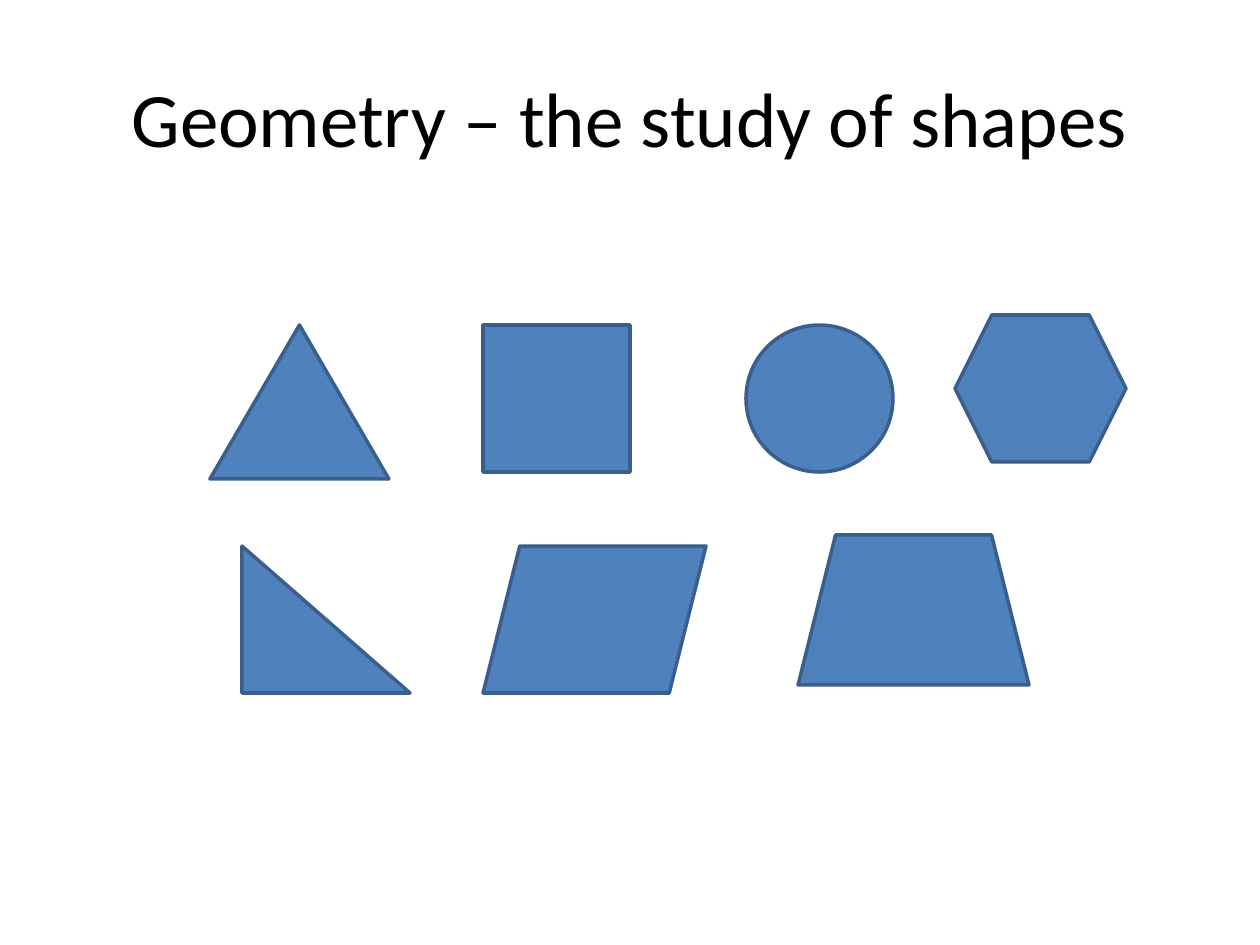
"""Build a geometry slide with a title and seven basic shapes."""
from pptx import Presentation
from pptx.dml.color import RGBColor
from pptx.enum.shapes import MSO_SHAPE as Preset
from pptx.enum.text import MSO_ANCHOR as Anchor, PP_ALIGN as Align
from pptx.util import Emu, Pt

SCALE = 914400 / 126
BLACK = RGBColor(0x00, 0x00, 0x00)
BLUE = RGBColor(0x4F, 0x81, 0xBD)
DARK_BLUE = RGBColor(0x3A, 0x5F, 0x8C)
TITLE_FONT = {"name": "Calibri", "size": Pt(44)}
SIDE = 147
SHAPES = [
    (Preset.ISOSCELES_TRIANGLE, 210, 325, 179, 154),
    (Preset.RECTANGLE, 483, 325, SIDE, SIDE),
    (Preset.OVAL, 746, 325, SIDE, SIDE),
    (Preset.RIGHT_TRIANGLE, 242, 546, 168, SIDE),
    (Preset.PARALLELOGRAM, 483, 546, 223, SIDE),
    (Preset.TRAPEZOID, 798, 535, 231, 150),
    (Preset.HEXAGON, 955, 315, 171, SIDE),
]


def px(*lengths):
    return [Emu(round(length * SCALE)) for length in lengths]


presentation = Presentation()
presentation.slide_width, presentation.slide_height = px(1260, 945)
slide = presentation.slides.add_slide(presentation.slide_layouts[6])

title = slide.shapes.add_textbox(*px(63, 38, 1134, 157)).text_frame
title.word_wrap = True
title.vertical_anchor = Anchor.MIDDLE
paragraph = title.paragraphs[0]
paragraph.alignment = Align.CENTER
run = paragraph.add_run()
run.text = "Geometry – the study of shapes"
for name, value in TITLE_FONT.items():
    setattr(run.font, name, value)
run.font.color.rgb = BLACK

for preset, *box in SHAPES:
    shape = slide.shapes.add_shape(preset, *px(*box))
    shape.shadow.inherit = False
    shape.fill.solid()
    shape.fill.fore_color.rgb = BLUE
    shape.line.color.rgb = DARK_BLUE
    shape.line.width = Pt(2)

presentation.save("out.pptx")
